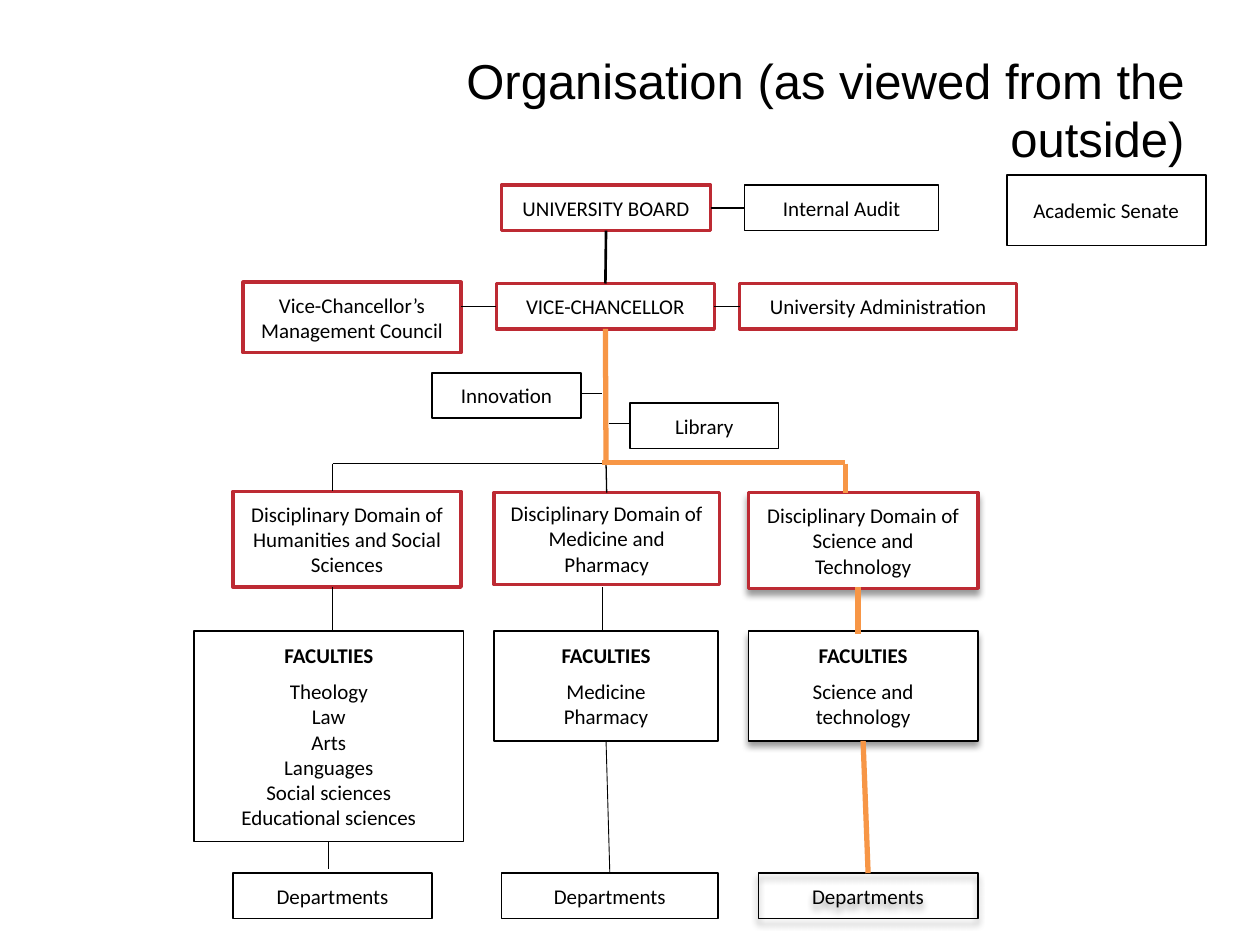
from dataclasses import dataclass

from lxml import etree
from pptx import Presentation
from pptx.dml.color import RGBColor
from pptx.enum import shapes, text
from pptx.oxml.ns import qn
from pptx.util import Inches, Pt

BLACK = RGBColor(0x00, 0x00, 0x00)
WHITE = RGBColor(0xFF, 0xFF, 0xFF)
RED = RGBColor(0xBD, 0x2A, 0x33)
ORANGE = RGBColor(0xF7, 0x96, 0x46)
TOP, LEFT, BOTTOM, RIGHT = range(4)
ROW = 0.36


@dataclass
class Box:
    left: float
    top: float
    width: float
    height: float

    def inner(self, left, top, width, height):
        """Box whose position is given from this box's corner."""
        return Box(self.left + left, self.top + top, width, height)

    def point(self, left, top):
        return self.left + left, self.top + top

    def inches(self):
        return [Inches(n) for n in (self.left, self.top, self.width, self.height)]


def write(para, words, size=12, font="Calibri", bold=False,
          align=text.PP_ALIGN.CENTER, before=0):
    para.alignment = align
    para.space_before = Pt(before)
    for index, line in enumerate(words.split("\n")):
        if index:
            para.add_line_break()
        span = para.add_run()
        span.text = line
        span.font.size = Pt(size)
        span.font.name = font
        span.font.bold = bold
        span.font.color.rgb = BLACK
    for line_break in para._p.findall(qn("a:br")):
        etree.SubElement(line_break, qn("a:rPr"), sz=str(size * 100))


def add_effects(shape, shadow=False):
    """Replace the theme's shadow with none, or with a soft one below."""
    effects = etree.SubElement(shape._element.spPr, qn("a:effectLst"))
    if shadow:
        outer = etree.SubElement(effects, qn("a:outerShdw"), blurRad=str(Pt(4)),
                                 dist=str(Pt(3)), dir="5400000", rotWithShape="0")
        color = etree.SubElement(outer, qn("a:srgbClr"), val=str(BLACK))
        etree.SubElement(color, qn("a:alpha"), val="40000")


def add_unit(page, box, words, color=BLACK, filled=False, shadow=False, members=None):
    unit = page.shapes.add_shape(shapes.MSO_SHAPE.RECTANGLE, *box.inches())
    if filled:
        unit.fill.solid()
        unit.fill.fore_color.rgb = WHITE
    else:
        unit.fill.background()
    unit.line.color.rgb = color
    unit.line.width = Pt(2 if color == RED else 1)
    add_effects(unit, shadow)
    frame = unit.text_frame
    frame.word_wrap = True
    frame.vertical_anchor = text.MSO_ANCHOR.MIDDLE
    frame.margin_left = frame.margin_right = Inches(0.12)
    frame.margin_top = frame.margin_bottom = Inches(0.08)
    write(frame.paragraphs[0], words, bold=bool(members))
    if members:
        write(frame.add_paragraph(), members, before=6)
    return unit


def add_line(page, start, end, color=BLACK, width=0.75):
    """Each end is a point, or a unit with the number of its side."""
    joined = [hasattr(mark[0], "shape_id") for mark in (start, end)]
    points = [(0, 0) if join else mark for join, mark in zip(joined, (start, end))]
    line = page.shapes.add_connector(
        shapes.MSO_CONNECTOR.STRAIGHT, *[Inches(n) for point in points for n in point])
    line.line.color.rgb = color
    line.line.width = Pt(width)
    add_effects(line)
    if joined[0]:
        line.begin_connect(*start)
    if joined[1]:
        line.end_connect(*end)


def add_title(page, box):
    title = page.shapes.title
    title.left, title.top, title.width, title.height = box.inches()
    title.text_frame.vertical_anchor = text.MSO_ANCHOR.MIDDLE
    write(title.text_frame.paragraphs[0], "Organisation (as viewed from the outside)",
          size=28, font="Arial", align=text.PP_ALIGN.RIGHT)


def add_leadership(page, box):
    board = add_unit(page, box.inner(2.05, 0.08, 1.66, ROW), "UNIVERSITY BOARD", RED)
    audit = add_unit(page, box.inner(3.98, 0.08, 1.54, ROW), "Internal Audit")
    add_unit(page, box.inner(6.06, 0, 1.58, 0.56), "Academic Senate")
    add_unit(page, box.inner(0, 0.85, 1.73, 0.56),
             "Vice-Chancellor’s Management Council", RED)
    chancellor = add_unit(page, box.inner(2.01, 0.86, 1.73, ROW), "VICE-CHANCELLOR", RED)
    office = add_unit(page, box.inner(3.94, 0.86, 2.2, ROW),
                      "University Administration", RED)
    add_line(page, (board, RIGHT), (audit, LEFT))
    add_line(page, (board, BOTTOM), (chancellor, TOP), width=1.5)
    add_line(page, box.point(1.73, 1.04), (chancellor, LEFT))
    add_line(page, (chancellor, RIGHT), (office, LEFT))
    return chancellor


def add_services(page, box):
    add_unit(page, box.inner(0, 0, 1.18, ROW), "Innovation")
    add_unit(page, box.inner(1.57, 0.24, 1.18, ROW), "Library")
    add_line(page, box.point(1.18, 0.16), box.point(1.35, 0.16), width=0.5)
    add_line(page, box.point(1.4, 0.4), box.point(1.57, 0.4), width=0.5)


def add_domain(page, box, domain, faculty, department, name, members,
               link, shadow=False):
    """Column of domain, faculties and departments; link is the upper line's x."""
    color, width = (ORANGE, 3) if shadow else (BLACK, 0.75)
    head = add_unit(page, box.inner(*domain), "Disciplinary Domain of " + name,
                    RED, filled=True, shadow=shadow)
    faculties = add_unit(page, box.inner(0, 1.11, *faculty), "FACULTIES",
                         filled=True, shadow=shadow, members=members)
    departments = add_unit(page, box.inner(department[0], 3.03, department[1], ROW),
                           "Departments", shadow=shadow)
    add_line(page, box.point(link, 0.76), box.point(link, 1.13 if shadow else 1.11),
             color, width)
    return head, faculties, departments


def add_domains(page, box, chancellor):
    humanities = add_domain(
        page, box.inner(0, 0, 2.14, 3.39), (0.31, 0, 1.81, 0.76), (2.14, 1.67),
        (0.31, 1.58), "Humanities and Social Sciences",
        "Theology\nLaw\nArts\nLanguages\nSocial sciences\nEducational sciences", 1.1)
    medicine = add_domain(
        page, box.inner(2.38, 0, 1.79, 3.39), (0, 0.01, 1.79, 0.73), (1.78, 0.87),
        (0.06, 1.72), "Medicine and Pharmacy", "Medicine\nPharmacy", 0.86)
    science = add_domain(
        page, box.inner(4.4, 0, 1.82, 3.39), (0, 0.01, 1.82, 0.76), (1.82, 0.87),
        (0.08, 1.74), "Science and Technology", "Science and technology",
        0.87, shadow=True)
    add_line(page, (humanities[1], BOTTOM), box.point(1.07, 3))
    add_line(page, (medicine[1], BOTTOM), (medicine[2], TOP), width=0.5)
    add_line(page, (science[1], BOTTOM), (science[2], TOP), ORANGE, 3)

    add_line(page, box.point(1.1, -0.22), box.point(3.24, -0.22))
    add_line(page, box.point(1.1, -0.22), box.point(1.1, 0))
    add_line(page, box.point(3.27, -0.22), (medicine[0], TOP))
    add_line(page, (chancellor, BOTTOM), box.point(3.27, -0.22), ORANGE, 3)
    add_line(page, box.point(3.24, -0.23), box.point(5.17, -0.23), ORANGE, 3)
    add_line(page, box.point(5.17, -0.22), box.point(5.17, 0.01), ORANGE, 3)


def main():
    deck = Presentation()
    deck.slide_width, deck.slide_height = Inches(10), Inches(7.5)
    page = deck.slides.add_slide(deck.slide_layouts[5])
    add_title(page, Box(2.17, 0.24, 7.33, 1.25))
    chancellor = add_leadership(page, Box(1.93, 1.39, 7.64, 1.41))
    add_services(page, Box(3.43, 2.96, 2.75, 0.6))
    add_domains(page, Box(1.54, 3.9, 6.22, 3.39), chancellor)
    deck.save("out.pptx")


if __name__ == "__main__":
    main()
